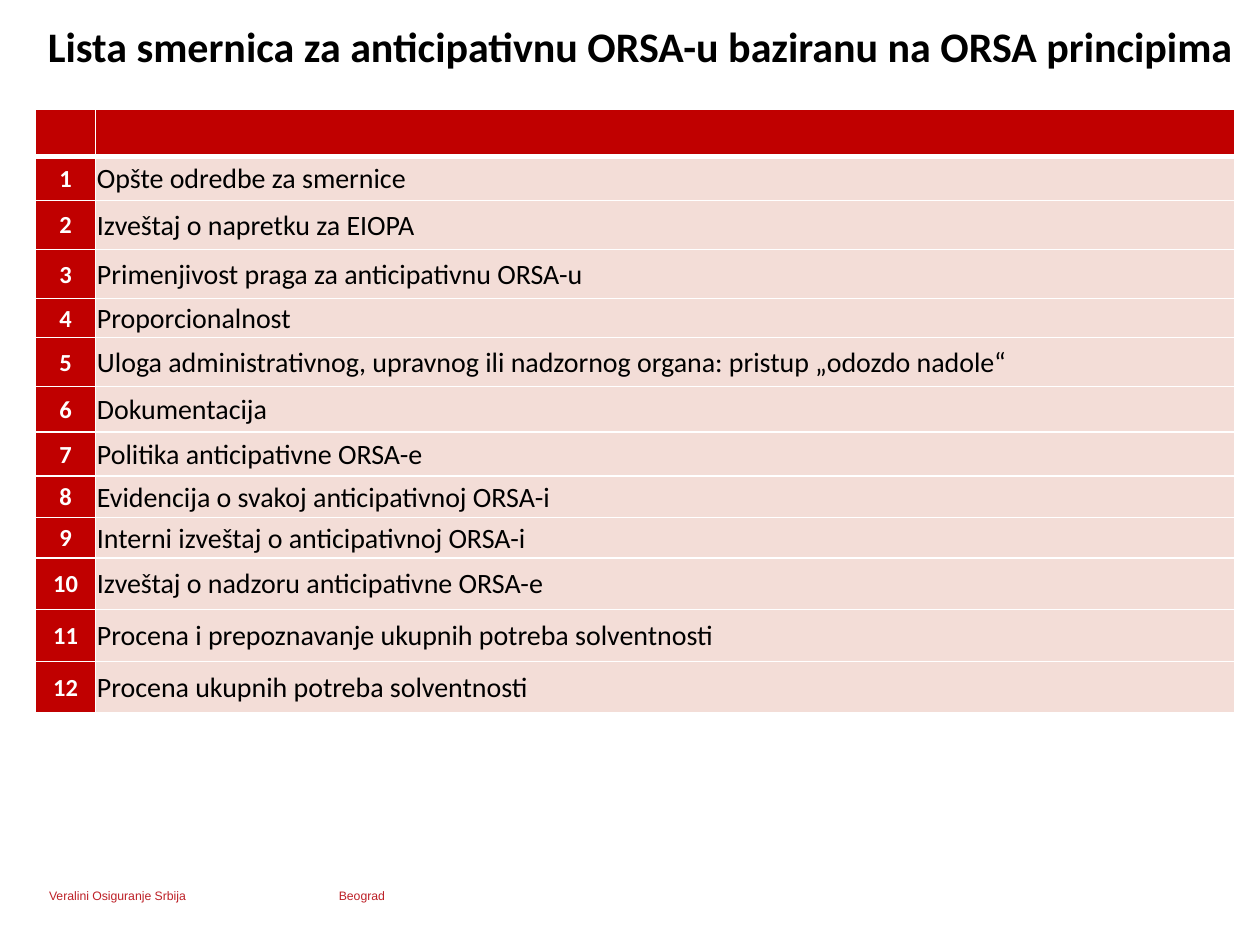
from lxml.etree import SubElement
from pptx import Presentation
from pptx.dml.color import RGBColor
from pptx.enum.text import MSO_ANCHOR as Anchor, PP_ALIGN as Align
from pptx.oxml.ns import qn
from pptx.util import Inches, Pt

TITLE = "Lista smernica za anticipativnu ORSA-u baziranu na ORSA principima"
GUIDELINES = [
    ("Opšte odredbe za smernice", 0.35),
    ("Izveštaj o napretku za EIOPA", 0.39),
    ("Primenjivost praga za anticipativnu ORSA-u", 0.39),
    ("Proporcionalnost", 0.31),
    ("Uloga administrativnog, upravnog ili nadzornog organa: pristup „odozdo nadole“", 0.39),
    ("Dokumentacija", 0.36),
    ("Politika anticipativne ORSA-e", 0.35),
    ("Evidencija o svakoj anticipativnoj ORSA-i", 0.33),
    ("Interni izveštaj o anticipativnoj ORSA-i", 0.32),
    ("Izveštaj o nadzoru anticipativne ORSA-e", 0.41),
    ("Procena i prepoznavanje ukupnih potreba solventnosti", 0.41),
    ("Procena ukupnih potreba solventnosti", 0.41),
]
FOOTERS = [("Veralini Osiguranje Srbija", 0.38, 2.16), ("Beograd", 2.68, 1.23)]
COLORS = {"red": "C00000", "pink": "F3DDD7", "white": "FFFFFF",
          "black": "000000", "footer": "BD2027"}
HEADER_HEIGHT = 0.37
COLUMNS = (0.48, 9.04)
TABLE_LEFT, TABLE_TOP = 0.28, 0.87


def add_text(paragraph, text, size, color, bold=False, font="Calibri"):
    run = paragraph.add_run()
    run.text = text
    run.font.name = font
    run.font.size = Pt(size)
    run.font.bold = bold
    run.font.color.rgb = RGBColor.from_string(COLORS[color])


def clear_insets(frame):
    frame.margin_left = frame.margin_right = 0
    frame.margin_top = frame.margin_bottom = 0
    frame.vertical_anchor = Anchor.TOP
    frame.word_wrap = True


def add_borders(cell, top, bottom):
    properties = cell._tc.get_or_add_tcPr()
    widths = {"a:lnL": 1, "a:lnR": 1, "a:lnT": top, "a:lnB": bottom}
    for position, (tag, width) in enumerate(widths.items()):
        line = properties.makeelement(qn(tag), {"w": str(Pt(width))})
        fill = SubElement(line, qn("a:solidFill"))
        SubElement(fill, qn("a:srgbClr"), val=COLORS["white"])
        properties.insert(position, line)


def style_cell(cell, fill, top, bottom):
    cell.fill.solid()
    cell.fill.fore_color.rgb = RGBColor.from_string(COLORS[fill])
    cell.margin_left = cell.margin_right = cell.margin_top = Inches(0.01)
    cell.margin_bottom = 0
    cell.vertical_anchor = Anchor.MIDDLE
    add_borders(cell, top, bottom)


def add_title(slide):
    title = slide.shapes.title
    title.left, title.top = Inches(0.38), Inches(0.26)
    title.width, title.height = Inches(9.58), Inches(0.26)
    clear_insets(title.text_frame)
    heading = title.text_frame.paragraphs[0]
    heading.alignment = Align.LEFT
    heading.line_spacing = Pt(22)
    add_text(heading, TITLE, 24, "black", bold=True)


def add_guidelines(slide):
    heights = [HEADER_HEIGHT] + [height for _, height in GUIDELINES]
    table = slide.shapes.add_table(
        len(heights), len(COLUMNS), Inches(TABLE_LEFT), Inches(TABLE_TOP),
        Inches(sum(COLUMNS)), Inches(sum(heights))).table
    for column, width in zip(table.columns, COLUMNS):
        column.width = Inches(width)
    for row, height in zip(table.rows, heights):
        row.height = Inches(height)
    for header in table.rows[0].cells:
        style_cell(header, "red", 1, 3)
    for number, (guideline, _) in enumerate(GUIDELINES, 1):
        number_cell, text_cell = table.rows[number].cells
        top = 3 if number == 1 else 1
        style_cell(number_cell, "red", top, 1)
        style_cell(text_cell, "pink", top, 1)
        label = number_cell.text_frame.paragraphs[0]
        label.alignment = Align.CENTER
        add_text(label, str(number), 14, "white", bold=True)
        add_text(text_cell.text_frame.paragraphs[0], guideline, 16, "black")


def add_footers(slide):
    for text, left, width in FOOTERS:
        footer = slide.shapes.add_textbox(
            Inches(left), Inches(7.06), Inches(width), Inches(0.12))
        clear_insets(footer.text_frame)
        line = footer.text_frame.paragraphs[0]
        line.line_spacing = 0.96
        indent = line._p.get_or_add_pPr()
        indent.set("marL", str(Inches(0.01)))
        add_text(line, text, 7, "footer", font="Arial")


def main():
    deck = Presentation()
    deck.slide_width, deck.slide_height = Inches(10), Inches(7.5)
    slide = deck.slides.add_slide(deck.slide_layouts.get_by_name("Title Only"))
    add_footers(slide)
    add_title(slide)
    add_guidelines(slide)
    deck.save("out.pptx")


if __name__ == "__main__":
    main()
